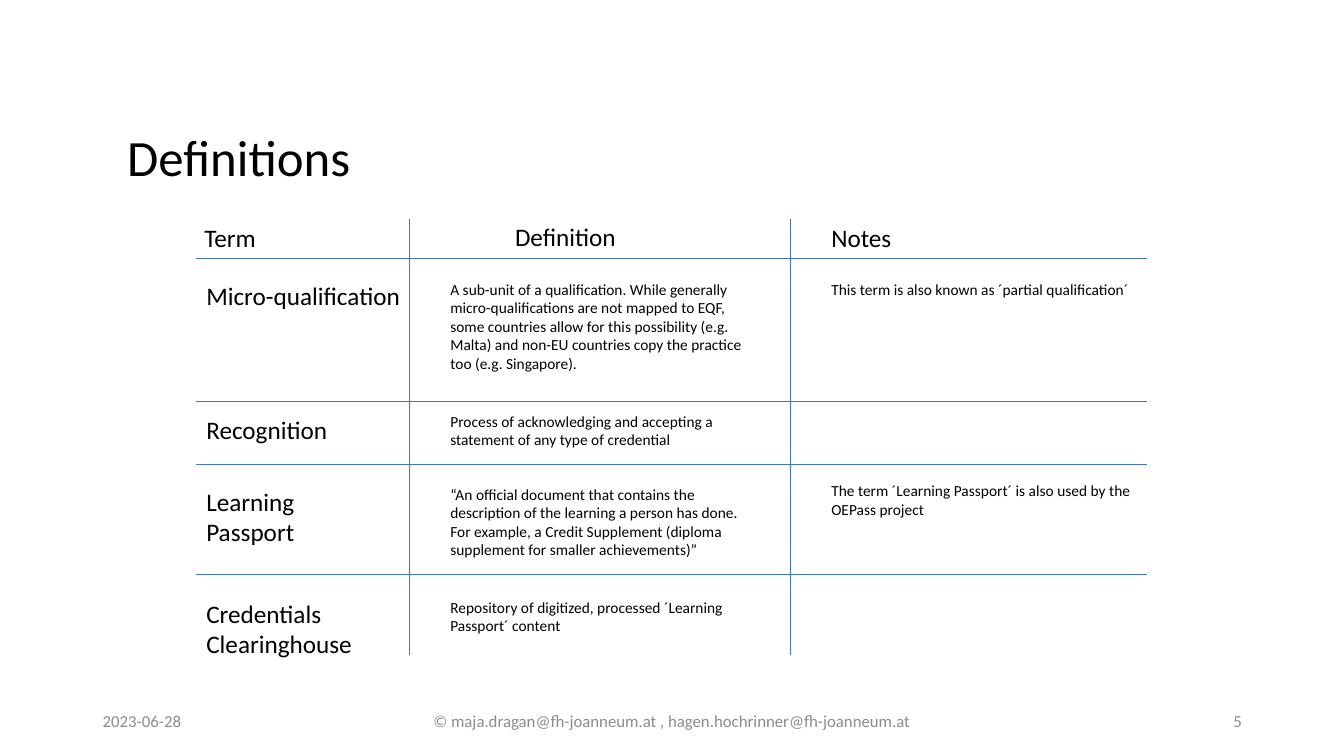
from pptx import Presentation
from pptx.dml.color import RGBColor
from pptx.enum.shapes import MSO_CONNECTOR
from pptx.enum.text import MSO_ANCHOR, MSO_AUTO_SIZE, PP_ALIGN
from pptx.oxml.ns import qn
from pptx.util import Cm, Pt
from lxml import etree

STRAIGHT = MSO_CONNECTOR.STRAIGHT
TOP, MIDDLE = MSO_ANCHOR.TOP, MSO_ANCHOR.MIDDLE
LEFT, CENTER, RIGHT = PP_ALIGN.LEFT, PP_ALIGN.CENTER, PP_ALIGN.RIGHT
FIT_SHAPE, NO_FIT = MSO_AUTO_SIZE.SHAPE_TO_FIT_TEXT, MSO_AUTO_SIZE.NONE

COLORS = {"text": "000000", "footer": "8C8C8C", "rule": "4472C4"}
FONT = "Calibri"

TERM_X, DEFINITION_X, NOTE_X = 4.95, 11.1, 20.7
CELL_WIDTH = 8.05

prs = Presentation()
prs.slide_width, prs.slide_height = Cm(33.87), Cm(19.05)
slide = prs.slides.add_slide(prs.slide_layouts[5])


def write(frame, lines, size, color="text", align=LEFT):
    """Fill a text frame with one paragraph per line."""
    for index, line in enumerate(lines):
        paragraph = frame.paragraphs[0] if index == 0 else frame.add_paragraph()
        paragraph.alignment = align
        run = paragraph.add_run()
        run.text = line
        run.font.name = FONT
        run.font.size = Pt(size)
        run.font.color.rgb = RGBColor.from_string(COLORS[color])


def add_text_box(x, y, width, height, wrap, fit=FIT_SHAPE, anchor=TOP):
    box = slide.shapes.add_textbox(Cm(x), Cm(y), Cm(width), Cm(height))
    frame = box.text_frame
    frame.word_wrap = wrap
    frame.auto_size = fit
    frame.vertical_anchor = anchor
    return frame


# Title
title = slide.shapes.title
title.left, title.top, title.width, title.height = Cm(2.95), Cm(3.45), Cm(23.9), Cm(1.47)
title.text_frame.auto_size = NO_FIT
title.text_frame.vertical_anchor = TOP
write(title.text_frame, ["Definitions"], 36.3)
title.text_frame.paragraphs[0].line_spacing = 0.7

# Rules between rows and columns
row_rules = [(4.93, y, 28.91, y) for y in (6.5, 10.11, 11.71, 14.48)]
column_rules = [(x, 5.52, x, 16.51) for x in (10.31, 19.91)]
for x1, y1, x2, y2 in row_rules + column_rules:
    rule = slide.shapes.add_connector(STRAIGHT, Cm(x1), Cm(y1), Cm(x2), Cm(y2))
    rule.line.color.rgb = RGBColor.from_string(COLORS["rule"])
    rule.line.width = Pt(0.5)
    etree.SubElement(rule._element.spPr, qn("a:effectLst"))

# Column headings and terms: x, y, width, lines
labels = [
    (4.9, 5.49, 1.83, ["Term"]),
    (12.73, 5.46, 3.1, ["Definition"]),
    (NOTE_X, 5.49, 2.03, ["Notes"]),
    (TERM_X, 6.93, 5.59, ["Micro-qualification"]),
    (TERM_X, 10.31, 3.61, ["Recognition"]),
    (TERM_X, 12.12, 2.92, ["Learning", "Passport"]),
    (TERM_X, 14.94, 4.22, ["Credentials", "Clearinghouse"]),
]
for x, y, width, lines in labels:
    write(add_text_box(x, y, width, 0.24 + 0.78 * len(lines), wrap=False), lines, 18)

# Definitions and notes: x, y, height, text
explanations = [
    (DEFINITION_X, 6.93, 2.62,
     "A sub-unit of a qualification. While generally micro-qualifications are not "
     "mapped to EQF, some countries allow for this possibility (e.g. Malta) and "
     "non-EU countries copy the practice too (e.g. Singapore)."),
    (NOTE_X, 6.93, 0.74, "This term is also known as ´partial qualification´"),
    (DEFINITION_X, 10.26, 1.19,
     "Process of acknowledging and accepting a statement of any type of credential"),
    (DEFINITION_X, 12.09, 2.13,
     "“An official document that contains the description of the learning a person "
     "has done. For example, a Credit Supplement (diploma supplement for smaller "
     "achievements)”"),
    (NOTE_X, 12.01, 1.19,
     "The term ´Learning Passport´ is also used by the OEPass project"),
    (DEFINITION_X, 14.94, 1.19,
     "Repository of digitized, processed ´Learning Passport´ content"),
]
for x, y, height, text in explanations:
    write(add_text_box(x, y, CELL_WIDTH, height, wrap=True), [text], 11)

# Footer: x, width, alignment, text
footers = [
    (2.34, 7.62, LEFT, "2023-06-28"),
    (9.58, 14.71, CENTER,
     "© maja.dragan@fh-joanneum.at , hagen.hochrinner@fh-joanneum.at"),
    (23.93, 7.62, RIGHT, "5"),
]
for x, width, align, text in footers:
    frame = add_text_box(x, 17.65, width, 1.02, wrap=True, fit=NO_FIT, anchor=MIDDLE)
    write(frame, [text], 12, "footer", align)

prs.save("out.pptx")
